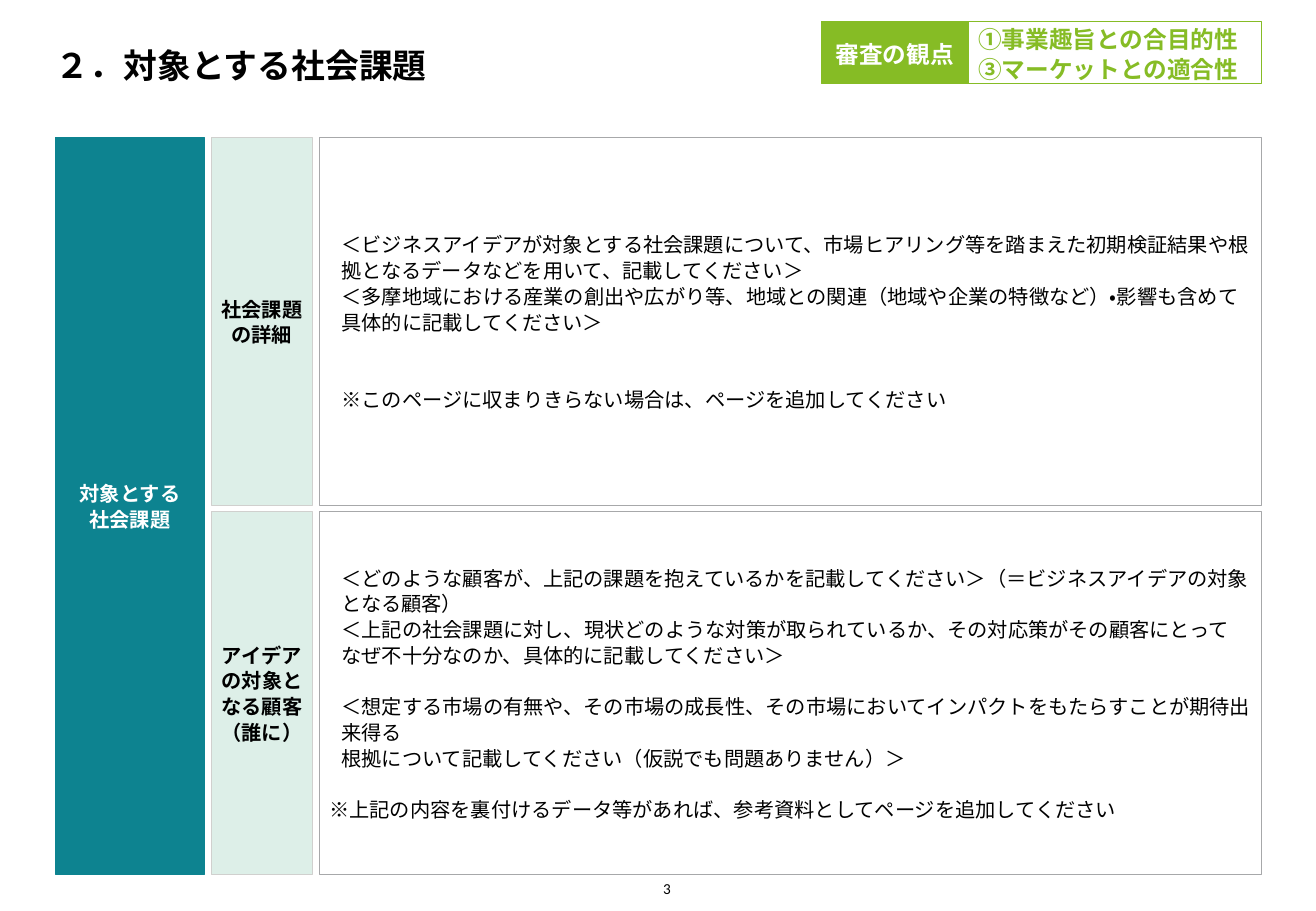
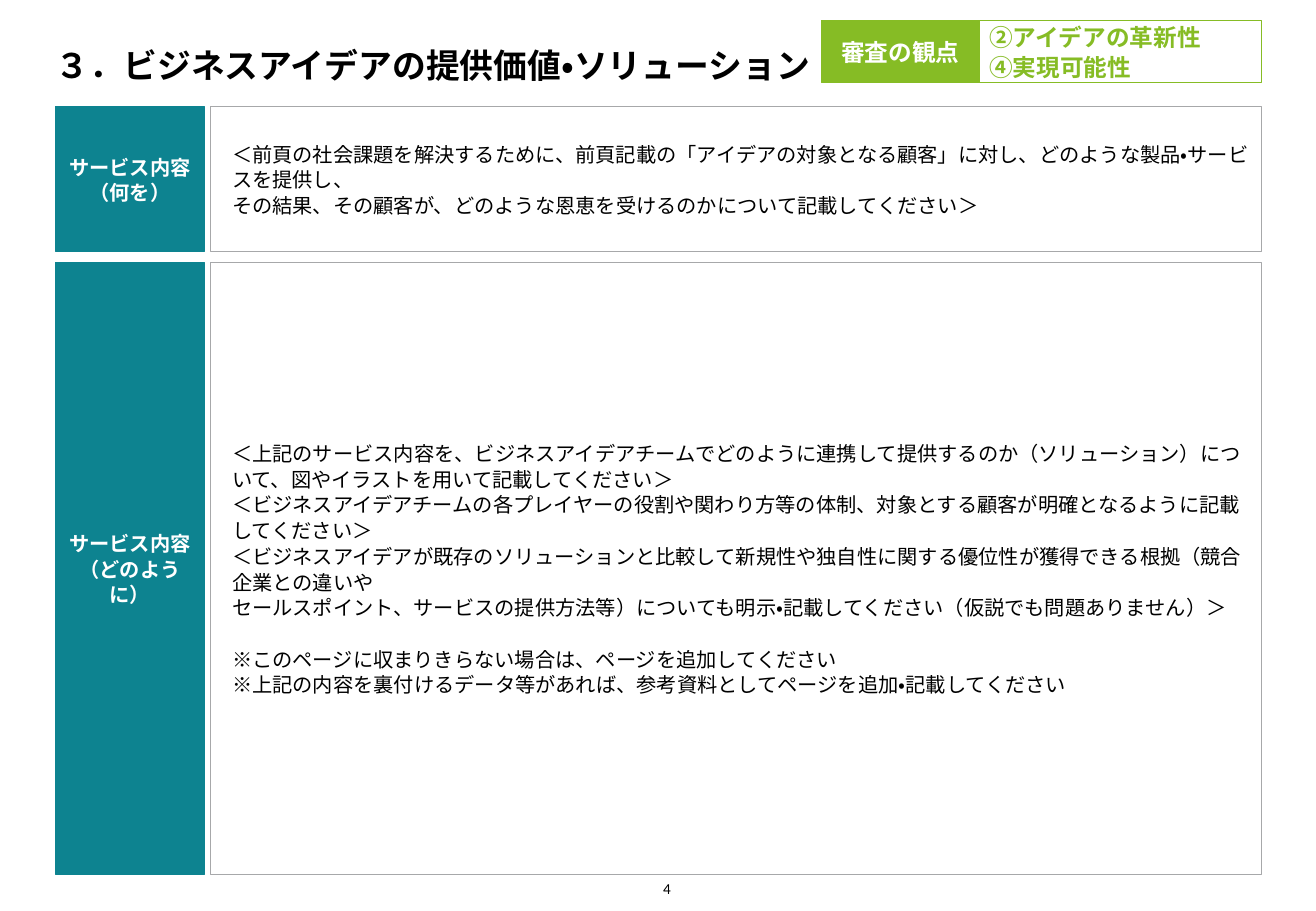
from copy import deepcopy
from dataclasses import dataclass

from pptx import Presentation
from pptx.dml.color import RGBColor
from pptx.enum.lang import MSO_LANGUAGE_ID
from pptx.enum.shapes import MSO_SHAPE
from pptx.enum.text import MSO_ANCHOR, MSO_AUTO_SIZE, PP_ALIGN
from pptx.oxml.ns import qn
from pptx.util import Inches, Pt

RECTANGLE = MSO_SHAPE.RECTANGLE
MIDDLE, BOTTOM = MSO_ANCHOR.MIDDLE, MSO_ANCHOR.BOTTOM
LEFT, CENTER, RIGHT = PP_ALIGN.LEFT, PP_ALIGN.CENTER, PP_ALIGN.RIGHT
NO_FIT = MSO_AUTO_SIZE.NONE
JAPANESE = MSO_LANGUAGE_ID.JAPANESE
TITLE_ONLY = 5


@dataclass(frozen=True)
class Theme:
    white: str = "FFFFFF"
    black: str = "000000"
    green: str = "86BC25"
    teal: str = "0D8390"
    mint: str = "DDEFE8"
    mint_line: str = "D0D0CE"
    grey_line: str = "A7A8AA"
    heading_font: str = "Calibri"
    body_font: str = "Arial"
    title_size: float = 20
    badge_size: float = 14
    body_size: float = 12
    number_size: float = 9
    line_spacing: float = 1.06
    blank_line: float = 15.2
    border: float = 0.5


THEME = Theme()
PAGE_LEFT, PAGE_RIGHT, PAGE_BOTTOM = 0.46, 10.38, 7.2
THEME_WIDTH = 1.22
INSET, INDENT = 0.08, 0.1
BADGE_LEFT, BADGE_HEIGHT = 6.76, 0.51


@dataclass(frozen=True)
class Line:
    """A paragraph, with the number of empty lines left above it."""
    text: str
    gap: int = 0
    indent: float = INDENT


def color(value):
    return RGBColor.from_string(value)


def style_paragraph(para, size, ink, font, bold=False, align=LEFT):
    para.alignment = align
    for span in para.runs:
        span.font.size = Pt(size)
        span.font.name = font
        span.font.bold = bold
        span.font.color.rgb = color(ink)
        span.font.language_id = JAPANESE
    for line_break in para._p.findall(qn("a:br")):
        line_break.append(deepcopy(para.runs[0]._r.rPr))


def set_frame(frame, anchor, inset, wrap=True):
    frame.word_wrap = wrap
    frame.auto_size = NO_FIT
    frame.vertical_anchor = anchor
    frame.margin_left = frame.margin_right = Inches(inset)
    frame.margin_top = frame.margin_bottom = Inches(inset)


def add_box(page, at, lines, fill, border, ink, size=THEME.body_size,
            bold=False, align=LEFT):
    box = page.shapes.add_shape(RECTANGLE, *map(Inches, at))
    box.shadow.inherit = False
    box.fill.solid()
    box.fill.fore_color.rgb = color(fill)
    box.line.color.rgb = color(border)
    box.line.width = Pt(THEME.border)
    frame = box.text_frame
    set_frame(frame, MIDDLE, INSET)
    for index, line in enumerate(lines):
        para = frame.add_paragraph() if index else frame.paragraphs[0]
        para.text = line.text
        para.line_spacing = THEME.line_spacing
        if line.gap:
            para.space_before = Pt(line.gap * THEME.blank_line)
        if line.indent:
            properties = para._p.get_or_add_pPr()
            properties.set("marL", str(Inches(line.indent)))
            properties.set("indent", "0")
        style_paragraph(para, size, ink, THEME.body_font, bold, align)


def add_theme_label(page, at, text):
    add_box(page, at, [Line(text, indent=0)], THEME.teal, THEME.teal,
            THEME.white, bold=True, align=CENTER)


def add_topic_label(page, at, text):
    add_box(page, at, [Line(text, indent=0)], THEME.mint, THEME.mint_line,
            THEME.black, bold=True, align=CENTER)


def add_answer(page, at, lines):
    add_box(page, at, lines, THEME.white, THEME.grey_line, THEME.black)


def add_criteria(page, top, label_width, criteria):
    """Review criteria in the top right corner."""
    split = BADGE_LEFT + label_width
    add_box(page, (split, top, PAGE_RIGHT - split, BADGE_HEIGHT),
            [Line(text, indent=0) for text in criteria],
            THEME.white, THEME.green, THEME.green, THEME.badge_size, True)
    add_box(page, (BADGE_LEFT, top, label_width, BADGE_HEIGHT),
            [Line("審査の観点", indent=0)],
            THEME.green, THEME.green, THEME.white, THEME.badge_size, True, CENTER)


def add_page(deck, title, number):
    page = deck.slides.add_slide(deck.slide_layouts[TITLE_ONLY])
    heading = page.shapes.title
    heading.left, heading.top = Inches(PAGE_LEFT), Inches(0.2)
    heading.width, heading.height = Inches(PAGE_RIGHT - PAGE_LEFT), Inches(0.67)
    heading.text_frame.text = title
    set_frame(heading.text_frame, MIDDLE, 0)
    style_paragraph(heading.text_frame.paragraphs[0], THEME.title_size,
                    THEME.black, THEME.heading_font, bold=True)

    footer = page.shapes.add_textbox(*map(Inches, (5.32, PAGE_BOTTOM, 0.2, 0.19)))
    footer.text_frame.text = str(number)
    set_frame(footer.text_frame, BOTTOM, 0, wrap=False)
    style_paragraph(footer.text_frame.paragraphs[0], THEME.number_size,
                    THEME.black, THEME.heading_font, align=RIGHT)
    return page


def row_spans(top, first_height, gap):
    """Top and height of two rows that fill the page down to its bottom."""
    second_top = top + first_height + gap
    return (top, first_height), (second_top, PAGE_BOTTOM - second_top)


def build_issue_page(deck):
    page = add_page(deck, "２．対象とする社会課題", 3)
    add_criteria(page, 0.18, 1.21,
                 ["①事業趣旨との合目的性", "③マーケットとの適合性"])
    top, gap, topic_width = 1.13, 0.06, 0.83
    add_theme_label(page, (PAGE_LEFT, top, THEME_WIDTH, PAGE_BOTTOM - top),
                    "対象とする\n社会課題")
    topics = [
        ("社会課題の詳細", [
            Line("＜ビジネスアイデアが対象とする社会課題について、市場ヒアリング等を踏まえた初期検証結果や根拠となるデータなどを用いて、記載してください＞"),
            Line("＜多摩地域における産業の創出や広がり等、地域との関連（地域や企業の特徴など）・影響も含めて具体的に記載してください＞"),
            Line("※このページに収まりきらない場合は、ページを追加してください", gap=2),
        ]),
        ("アイデアの対象となる顧客\n（誰に）", [
            Line("＜どのような顧客が、上記の課題を抱えているかを記載してください＞（＝ビジネスアイデアの対象となる顧客）"),
            Line("＜上記の社会課題に対し、現状どのような対策が取られているか、その対応策がその顧客にとって\nなぜ不十分なのか、具体的に記載してください＞"),
            Line("＜想定する市場の有無や、その市場の成長性、その市場においてインパクトをもたらすことが期待出来得る\n根拠について記載してください（仮説でも問題ありません）＞", gap=1),
            Line("※上記の内容を裏付けるデータ等があれば、参考資料としてページを追加してください", gap=1, indent=0),
        ]),
    ]
    topic_left = PAGE_LEFT + THEME_WIDTH + gap
    answer_left = topic_left + topic_width + gap
    for (y, height), (topic, lines) in zip(row_spans(top, 3.03, 0.05), topics):
        add_answer(page, (answer_left, y, PAGE_RIGHT - answer_left, height), lines)
        add_topic_label(page, (topic_left, y, topic_width, height), topic)


def build_solution_page(deck):
    page = add_page(deck, "３．ビジネスアイデアの提供価値・ソリューション", 4)
    add_criteria(page, 0.17, 1.3, ["②アイデアの革新性", "④実現可能性"])
    services = [
        ("サービス内容\n（何を）", [
            Line("＜前頁の社会課題を解決するために、前頁記載の「アイデアの対象となる顧客」に対し、どのような製品・サービスを提供し、\nその結果、その顧客が、どのような恩恵を受けるのかについて記載してください＞"),
        ]),
        ("サービス内容\n（どのように）", [
            Line("＜上記のサービス内容を、ビジネスアイデアチームでどのように連携して提供するのか（ソリューション）について、図やイラストを用いて記載してください＞"),
            Line("＜ビジネスアイデアチームの各プレイヤーの役割や関わり方等の体制、対象とする顧客が明確となるように記載してください＞"),
            Line("＜ビジネスアイデアが既存のソリューションと比較して新規性や独自性に関する優位性が獲得できる根拠（競合企業との違いや\nセールスポイント、サービスの提供方法等）についても明示・記載してください（仮説でも問題ありません）＞"),
            Line("※このページに収まりきらない場合は、ページを追加してください", gap=1),
            Line("※上記の内容を裏付けるデータ等があれば、参考資料としてページを追加・記載してください"),
        ]),
    ]
    answer_left = PAGE_LEFT + THEME_WIDTH + 0.05
    for (y, height), (service, lines) in zip(row_spans(0.88, 1.19, 0.09), services):
        add_theme_label(page, (PAGE_LEFT, y, THEME_WIDTH, height), service)
        add_answer(page, (answer_left, y, PAGE_RIGHT - answer_left, height), lines)


def main():
    deck = Presentation()
    deck.slide_width, deck.slide_height = Inches(10.83), Inches(7.5)
    build_issue_page(deck)
    build_solution_page(deck)
    deck.save("out.pptx")


if __name__ == "__main__":
    main()
